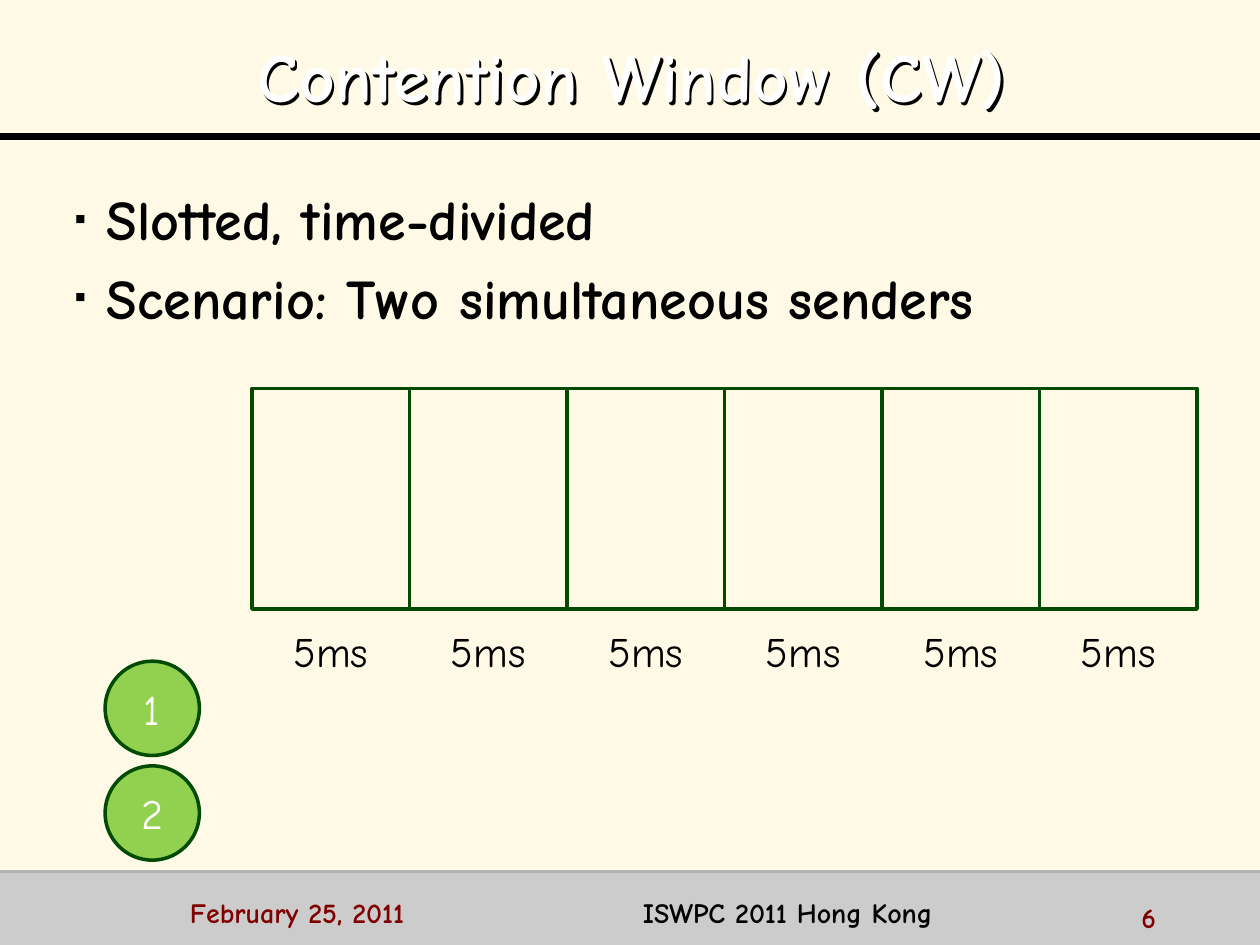
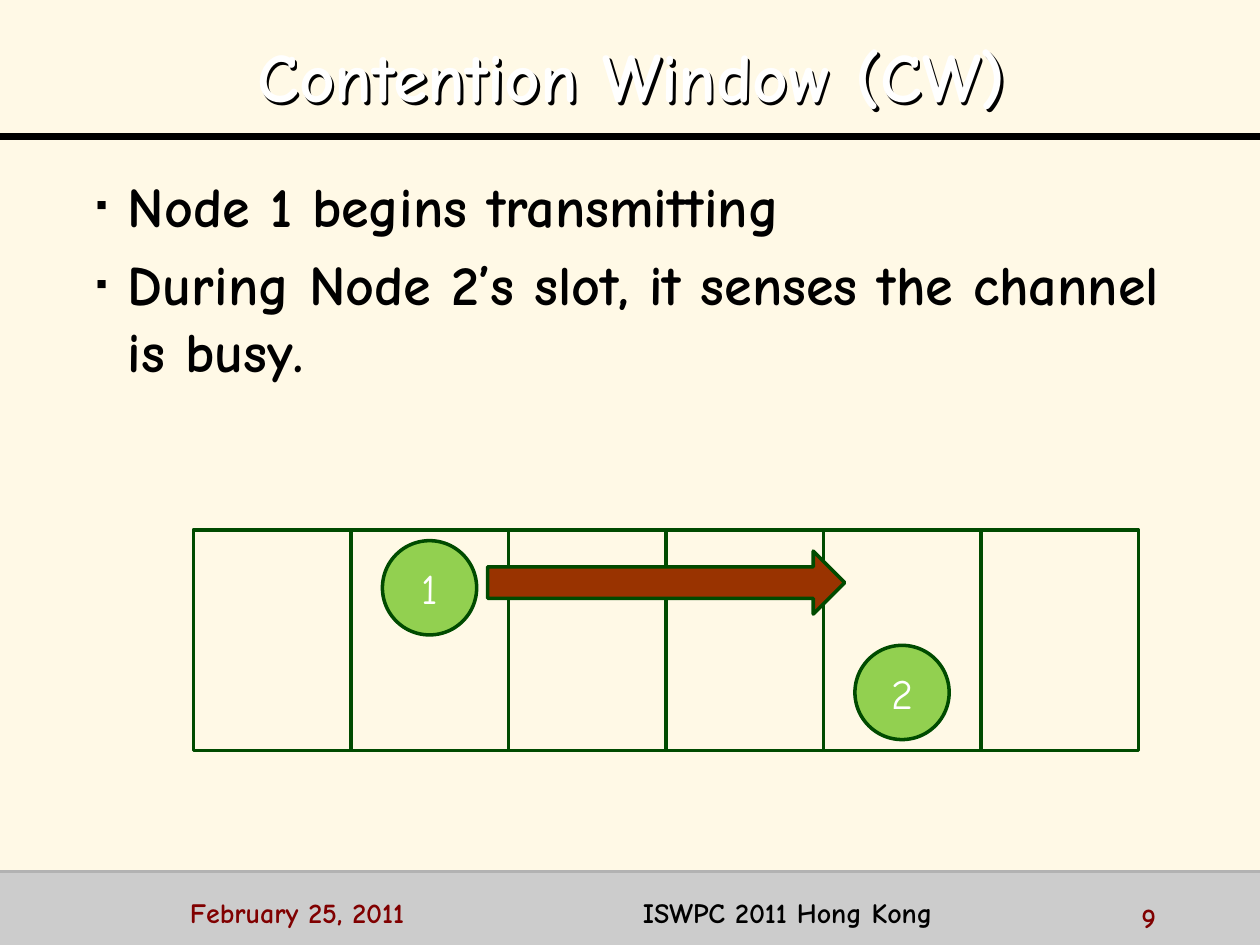
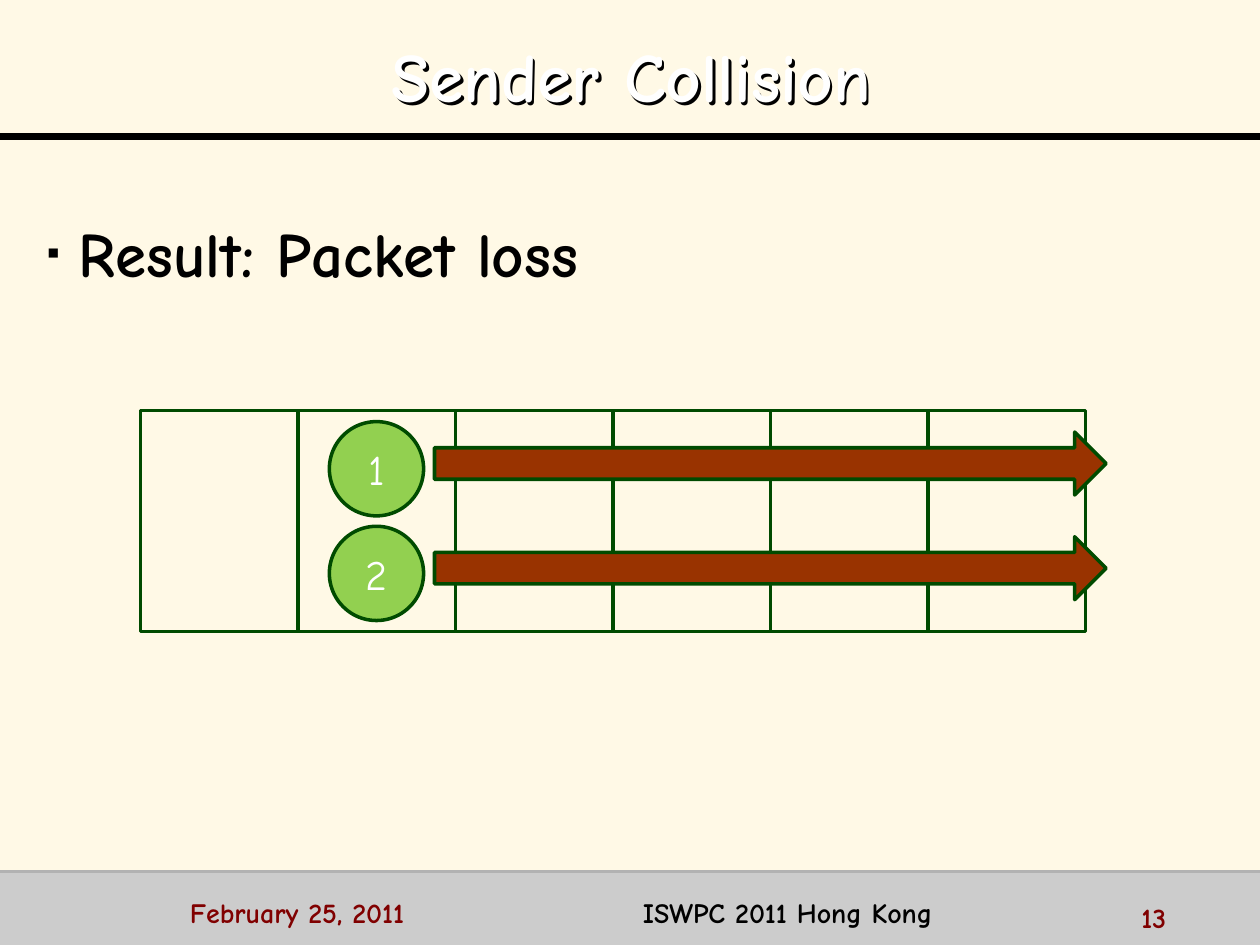
from dataclasses import dataclass
from lxml.etree import SubElement
from pptx import Presentation
from pptx.dml.color import RGBColor
from pptx.enum.shapes import MSO_CONNECTOR, MSO_SHAPE
from pptx.enum.text import MSO_ANCHOR, PP_ALIGN
from pptx.oxml.ns import qn
from pptx.util import Cm, Pt


@dataclass(frozen=True)
class Theme:
    face: str = "Comic Neue"
    paper: RGBColor = RGBColor(0xFF, 0xF9, 0xE6)
    band: RGBColor = RGBColor(0xCC, 0xCC, 0xCC)
    rule: RGBColor = RGBColor(0xB2, 0xB2, 0xB2)
    ink: RGBColor = RGBColor(0, 0, 0)
    white: RGBColor = RGBColor(0xFF, 0xFF, 0xFF)
    maroon: RGBColor = RGBColor(0x80, 0, 0)
    edge: RGBColor = RGBColor(0, 0x4B, 0)
    node: RGBColor = RGBColor(0x92, 0xD0, 0x50)
    arrow: RGBColor = RGBColor(0x99, 0x33, 0)
    title: float = 39.6
    label: int = 24
    foot: int = 16
    stroke: int = 2


T = Theme()
WIDE, HIGH = 25.4, 19.05
TOP, BASE = 2.75, 17.57          # heights of the two rules
SLOT, TALL, COUNT = 3.175, 4.45, 6
DOT, STEP = 1.9, 2.11            # node size, distance between node rows

# grid: corner of the slots; home: corner of node 1
# nodes: slots to the right of home and arrow length, one pair a row
SLIDES = [
    dict(title="Contention Window (CW)", page="6", size=32,
         body=(1.26, 3.6), points=["Slotted, time-divided",
                                   "Scenario: Two simultaneous senders"],
         grid=(5.08, 7.83), time="5ms", home=(2.12, 13.33),
         nodes=[(0, 0), (0, 0)]),
    dict(title="Contention Window (CW)", page="9", size=32,
         body=(1.69, 3.33), points=["Node 1 begins transmitting",
                                    "During Node 2’s slot, it senses the channel is busy."],
         grid=(3.9, 10.68), time="", home=(7.71, 10.9),
         nodes=[(0, 7.2), (3, 0)]),
    dict(title="Sender Collision", page="13", size=36,
         body=(0.7, 4.19), points=["Result: Packet loss"],
         grid=(2.83, 8.28), time="", home=(6.64, 8.5),
         nodes=[(0, 13.54), (0, 13.54)]),
]


def draw(kind, x, y, w, h, fill=None, line=None):
    """Add a flat preset shape to the current slide."""
    shape = slide.shapes.add_shape(kind, Cm(x), Cm(y), Cm(w), Cm(h))
    shape.shadow.inherit = False
    if fill is None:
        shape.fill.background()
    else:
        shape.fill.solid()
        shape.fill.fore_color.rgb = fill
    if line is None:
        shape.line.fill.background()
    else:
        shape.line.color.rgb = line
        shape.line.width = Pt(T.stroke)
    return shape


def style(para, size, color, bold=False, align=PP_ALIGN.LEFT):
    """Set the type of a whole paragraph."""
    para.alignment = align
    font = para.font
    font.name, font.size, font.bold = T.face, Pt(size), bold
    font.color.rgb = color


deck = Presentation()
deck.slide_width, deck.slide_height = Cm(WIDE), Cm(HIGH)

for data in SLIDES:
    slide = deck.slides.add_slide(deck.slide_layouts[6])
    slide.background.fill.solid()
    slide.background.fill.fore_color.rgb = T.paper

    # Footer band and rules
    draw(MSO_SHAPE.RECTANGLE, 0, BASE, WIDE, HIGH - BASE, T.band)
    for y, color, width in [(TOP, T.ink, 4), (BASE, T.rule, 2)]:
        rule = slide.shapes.add_connector(
            MSO_CONNECTOR.STRAIGHT, 0, Cm(y), Cm(WIDE), Cm(y))
        rule.line.color.rgb = color
        rule.line.width = Pt(width)
        SubElement(rule._element.spPr, qn("a:effectLst"))

    # Title; its unfilled box casts the shadow of the letters
    box = slide.shapes.add_textbox(Cm(0.53), Cm(0.33), Cm(24.4), Cm(2.2))
    glow = SubElement(box._element.spPr, qn("a:effectLst"))
    shade = SubElement(glow, qn("a:outerShdw"), dist="25400", dir="2700000")
    SubElement(shade, qn("a:srgbClr"), val=str(T.ink))
    frame = box.text_frame
    frame.word_wrap = True
    frame.vertical_anchor = MSO_ANCHOR.MIDDLE
    para = frame.paragraphs[0]
    para.text = data["title"]
    para.line_spacing = 1.1
    style(para, T.title, T.white, True, PP_ALIGN.CENTER)

    # Bullet points
    x, y = data["body"]
    frame = slide.shapes.add_textbox(
        Cm(x), Cm(y), Cm(22.86), Cm(13)).text_frame
    frame.word_wrap = True
    for i, point in enumerate(data["points"]):
        para = frame.paragraphs[0] if i == 0 else frame.add_paragraph()
        para.text = point
        if i:
            para.space_before = Pt(data["size"] * 0.2)
        props = para._p.get_or_add_pPr()
        props.set("marL", str(Cm(0.64)))
        props.set("indent", str(-Cm(0.64)))
        tint = SubElement(props, qn("a:buClr"))
        SubElement(tint, qn("a:srgbClr"), val=str(T.ink))
        SubElement(props, qn("a:buSzPct"), val="50000")
        SubElement(props, qn("a:buFont"), typeface=T.face)
        SubElement(props, qn("a:buChar"), char="▪")
        style(para, data["size"], T.ink, True)

    # Time slots
    left, top = data["grid"]
    for i in range(COUNT):
        x = left + i * SLOT
        draw(MSO_SHAPE.RECTANGLE, x, top, SLOT, TALL, line=T.edge)
        if data["time"]:
            frame = slide.shapes.add_textbox(
                Cm(x), Cm(top + 4.66), Cm(SLOT), Cm(1.02)).text_frame
            frame.word_wrap = True
            para = frame.paragraphs[0]
            para.text = data["time"]
            style(para, T.label, T.ink, align=PP_ALIGN.CENTER)

    # Numbered nodes and their transmissions
    left, top = data["home"]
    for row, (col, reach) in enumerate(data["nodes"]):
        x, y = left + col * SLOT, top + row * STEP
        node = draw(MSO_SHAPE.OVAL, x, y, DOT, DOT, T.node, T.edge)
        node.text_frame.vertical_anchor = MSO_ANCHOR.MIDDLE
        para = node.text_frame.paragraphs[0]
        para.text = str(row + 1)
        style(para, T.label, T.white, align=PP_ALIGN.CENTER)
        if reach:
            draw(MSO_SHAPE.RIGHT_ARROW, x + 2.12, y + 0.21, reach, 1.27,
                 T.arrow, T.edge)

    # Footer date, venue and page number
    frame = slide.shapes.add_textbox(
        Cm(3.58), Cm(17.93), Cm(18.5), Cm(0.8)).text_frame
    frame.word_wrap = True
    para = frame.paragraphs[0]
    tabs = SubElement(para._p.get_or_add_pPr(), qn("a:tabLst"))
    SubElement(tabs, qn("a:tab"), pos=str(Cm(9.13)), algn="l")
    style(para, T.foot, T.maroon, True)
    para.add_run().text = "February 25, 2011\t"
    venue = para.add_run()
    venue.text = "ISWPC 2011 Hong Kong"
    venue.font.color.rgb = T.ink

    frame = slide.shapes.add_textbox(
        Cm(22.76), Cm(18.02), Cm(2.54), Cm(0.64)).text_frame
    frame.word_wrap = True
    para = frame.paragraphs[0]
    para.text = data["page"]
    style(para, T.foot, T.maroon, True)

deck.save("out.pptx")
